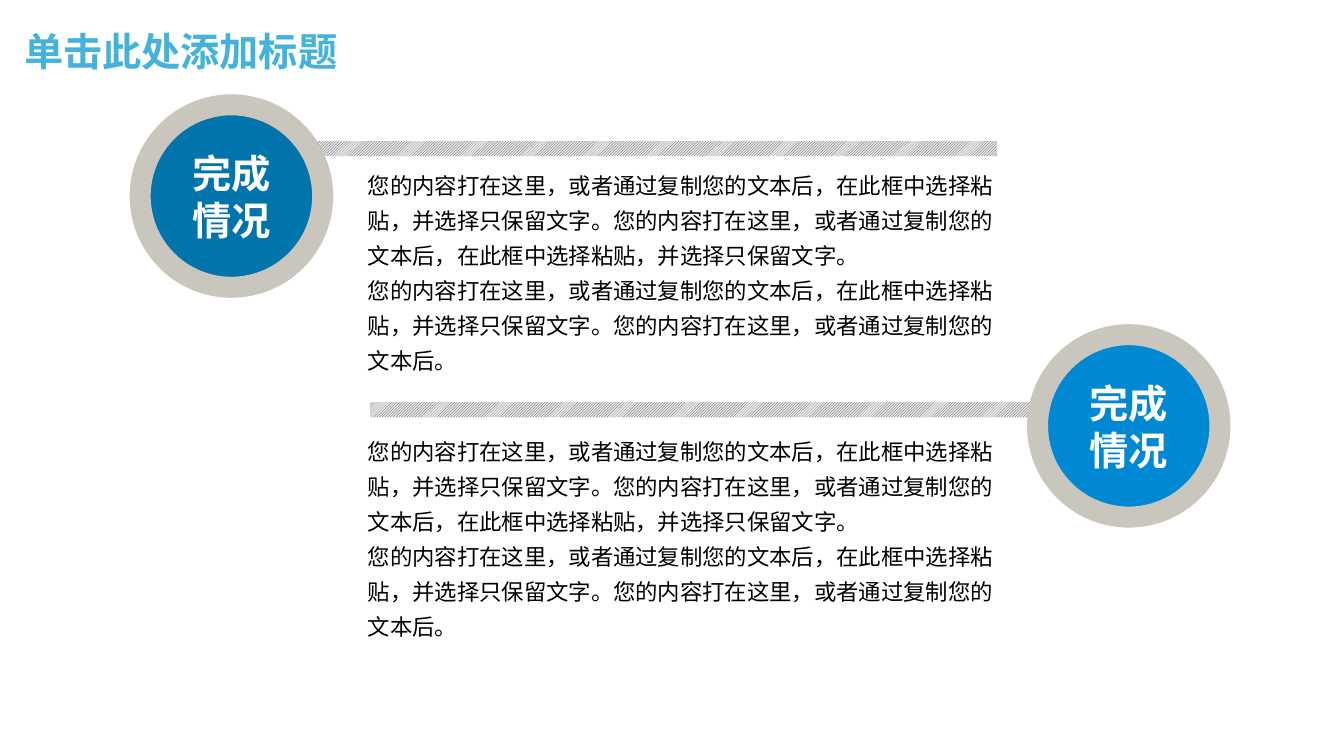
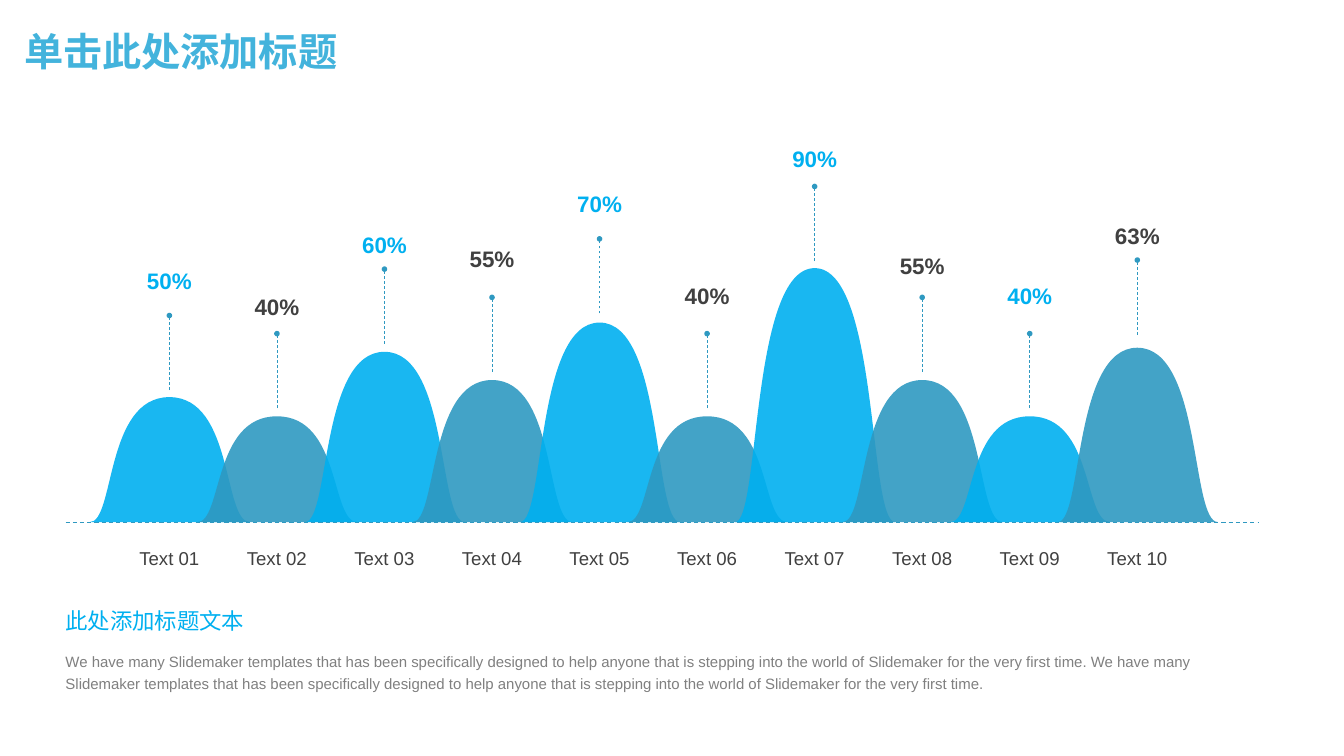
from lxml import etree
from pptx import Presentation
from pptx.dml.color import RGBColor
from pptx.enum import dml, shapes, text
from pptx.oxml import ns
from pptx.util import Inches, Pt

# Content
TITLE = "单击此处添加标题"
BADGE = "完成情况"
SENTENCE = "您的内容打在这里，或者通过复制您的文本后，在此框中选择粘贴，并选择只保留文字。"
BODY = [SENTENCE * 2, SENTENCE + "您的内容打在这里，或者通过复制您的文本后。"]
# (bar left, bar top, badge left, badge top, badge colour, body top)
SECTIONS = [
    (3.04, 1.4, 1.39, 1.04, "deep", 1.58),
    (3.67, 3.99, 10.29, 3.32, "bright", 4.22),
]

# (value, peak top, stem foot, value label top)
PEAKS = [
    ("50%", 3.94, 3.87, 2.6),
    ("40%", 4.13, 4.05, 2.85),
    ("60%", 3.49, 3.41, 2.24),
    ("55%", 3.77, 3.69, 2.38),
    ("70%", 3.2, 3.11, 1.83),
    ("40%", 4.13, 4.05, 2.75),
    ("90%", 2.66, 2.59, 1.39),
    ("55%", 3.77, 3.69, 2.45),
    ("40%", 4.13, 4.05, 2.75),
    ("63%", 3.45, 3.32, 2.15),
]
SUBTITLE = "此处添加标题文本"
NOTE = ("We have many Slidemaker templates that has been specifically designed to help "
        "anyone that is stepping into the world of Slidemaker for the very first time.")

# Shared style
COLOURS = {
    "title": "43B3DC", "white": "FFFFFF", "black": "000000",
    "deep": "0274AC", "bright": "0089D2", "ring": "C8C6BD",
    "hatch": "414455", "hatch_back": "E8E8E6",
    "cyan": "00B0F0", "teal": "2F99C1", "dark": "404040", "grey": "808080",
}
CJK, LATIN, TITLE_FONT = "Noto Sans CJK SC", "Arial", "Montserrat"

# Peak chart geometry
BASE, FIRST_CENTRE, STEP = 5.18, 1.68, 9.6 / 9
HALF, STEM, LABEL_WIDTH = 0.79, 0.74, 0.73


def rgb(name):
    return RGBColor.from_string(COLOURS[name])


def write(frame, paragraphs, size, colour, font, bold=False, align=None, spacing=None):
    frame.word_wrap = True
    for i, words in enumerate(paragraphs):
        paragraph = frame.paragraphs[0] if i == 0 else frame.add_paragraph()
        paragraph.text = words
        paragraph.alignment = align
        paragraph.line_spacing = spacing
        for run in paragraph.runs:
            run.font.size, run.font.bold, run.font.name = Pt(size), bold, font
            run.font.color.rgb = rgb(colour)
            east_asian = etree.SubElement(run.font._element, ns.qn("a:ea"))
            east_asian.set("typeface", CJK)


def add_text(slide, box, paragraphs, size, colour, font, inset=True, **style):
    frame = slide.shapes.add_textbox(*map(Inches, box)).text_frame
    if not inset:
        frame.margin_left = frame.margin_right = frame.margin_top = frame.margin_bottom = 0
    write(frame, paragraphs, size, colour, font, **style)
    return frame


def fill_plain(shape, colour, opacity=100):
    """Flat fill without shadow or outline."""
    shape.shadow.inherit = False
    shape.line.fill.background()
    shape.fill.solid()
    shape.fill.fore_color.rgb = rgb(colour)
    if opacity < 100:
        tint = shape._element.spPr.find(".//" + ns.qn("a:srgbClr"))
        etree.SubElement(tint, ns.qn("a:alpha")).set("val", str(opacity * 1000))


def add_preset(slide, preset, box, colour, opacity=100):
    shape = slide.shapes.add_shape(preset, *map(Inches, box))
    fill_plain(shape, colour, opacity)
    return shape


def add_dashed(slide, start, end, width):
    line = slide.shapes.add_connector(
        shapes.MSO_CONNECTOR.STRAIGHT, *map(Inches, start + end))
    line.line.color.rgb = rgb("teal")
    line.line.width = Pt(width)
    line.line.dash_style = dml.MSO_LINE.DASH
    etree.SubElement(line._element.spPr, ns.qn("a:effectLst"))
    return line


def new_slide(deck):
    """Slide with the shared content panel and title."""
    slide = deck.slides.add_slide(deck.slide_layouts[6])
    add_preset(slide, shapes.MSO_SHAPE.RECTANGLE, (0, 0.84, 13.33, 6.66), "white", 88)
    title = add_text(slide, (0.14, 0.14, 11.5, 0.79), [TITLE], 28, "title", TITLE_FONT,
                     bold=True, spacing=0.9)
    title.vertical_anchor = text.MSO_ANCHOR.MIDDLE
    return slide


def add_section(slide, bar_left, bar_top, badge_left, badge_top, colour, body_top):
    # Hatched bar
    bar = add_preset(slide, shapes.MSO_SHAPE.RECTANGLE,
                     (bar_left, bar_top, 6.85, 0.15), "hatch")
    bar.fill.patterned()
    bar.fill.pattern = dml.MSO_PATTERN.LIGHT_UPWARD_DIAGONAL
    bar.fill.fore_color.rgb = rgb("hatch")
    bar.fill.back_color.rgb = rgb("hatch_back")

    # Round badge
    badge = add_preset(slide, shapes.MSO_SHAPE.OVAL,
                       (badge_left, badge_top, 1.81, 1.81), colour)
    badge.line.color.rgb = rgb("ring")
    badge.line.width = Pt(15)
    badge.text_frame.vertical_anchor = text.MSO_ANCHOR.MIDDLE
    write(badge.text_frame, [BADGE], 28, "white", CJK, bold=True,
          align=text.PP_ALIGN.CENTER)

    # Body text
    add_text(slide, (3.55, body_top, 6.46, 2.2), BODY, 16, "black", CJK, spacing=1.3)


def add_peak(slide, centre, top, colour):
    left, right, apex = (centre - HALF, BASE), (centre + HALF + 0.01, BASE), (centre, top)
    outline = slide.shapes.build_freeform(*map(Inches, left))
    outline.add_line_segments([tuple(map(Inches, point)) for point in (apex, right)],
                              close=True)
    peak = outline.convert_to_shape()
    fill_plain(peak, colour, 90)

    # Turn the two sides into cubic curves
    controls = [
        ((centre - 0.54, BASE), (centre - 0.64, top)),
        ((centre + 0.64, top), (centre + 0.53, BASE)),
    ]
    sides = peak._element.spPr.findall(".//" + ns.qn("a:lnTo"))
    for side, handles in zip(sides, controls):
        side.tag = ns.qn("a:cubicBezTo")
        for i, (x, y) in enumerate(handles):
            handle = etree.Element(ns.qn("a:pt"))
            handle.set("x", str(Inches(x) - peak.left))
            handle.set("y", str(Inches(y) - peak.top))
            side.insert(i, handle)


def add_peak_chart(slide):
    centres = [FIRST_CENTRE + STEP * i for i in range(len(PEAKS))]
    for i, (centre, (_, top, _, _)) in enumerate(zip(centres, PEAKS)):
        add_peak(slide, centre, top, ("cyan", "teal")[i % 2])
    add_dashed(slide, (0.65, BASE), (12.48, BASE), 0.75)

    # Stems, values and names
    centred = {"inset": False, "align": text.PP_ALIGN.CENTER, "spacing": 1.2}
    for i, (centre, (value, _, foot, label_top)) in enumerate(zip(centres, PEAKS)):
        stem = add_dashed(slide, (centre, foot), (centre, foot - STEM), 0.5)
        dot = etree.SubElement(stem.line._get_or_add_ln(), ns.qn("a:tailEnd"))
        for key, setting in (("type", "oval"), ("w", "sm"), ("len", "sm")):
            dot.set(key, setting)
        left = centre - LABEL_WIDTH / 2
        add_text(slide, (left, label_top, LABEL_WIDTH, 0.32), [value], 16,
                 ("cyan", "dark")[i % 2], LATIN, bold=True, **centred)
        add_text(slide, (left, 5.38, LABEL_WIDTH, 0.27), [f"Text {i + 1:02}"], 13.3,
                 "dark", LATIN, **centred)


def main():
    deck = Presentation()
    deck.slide_width, deck.slide_height = Inches(13.33), Inches(7.5)

    # Slide 1: two sections with badges
    progress = new_slide(deck)
    for section in SECTIONS:
        add_section(progress, *section)

    # Slide 2: peak chart with a note
    peaks = new_slide(deck)
    add_peak_chart(peaks)
    add_text(peaks, (0.65, 6.02, 4.76, 0.27), [SUBTITLE], 16, "cyan", CJK, inset=False)
    add_text(peaks, (0.65, 6.44, 11.84, 0.43), [f"{NOTE} {NOTE}"], 10.7, "grey", LATIN,
             inset=False, spacing=1.2)

    deck.save("out.pptx")


if __name__ == "__main__":
    main()
